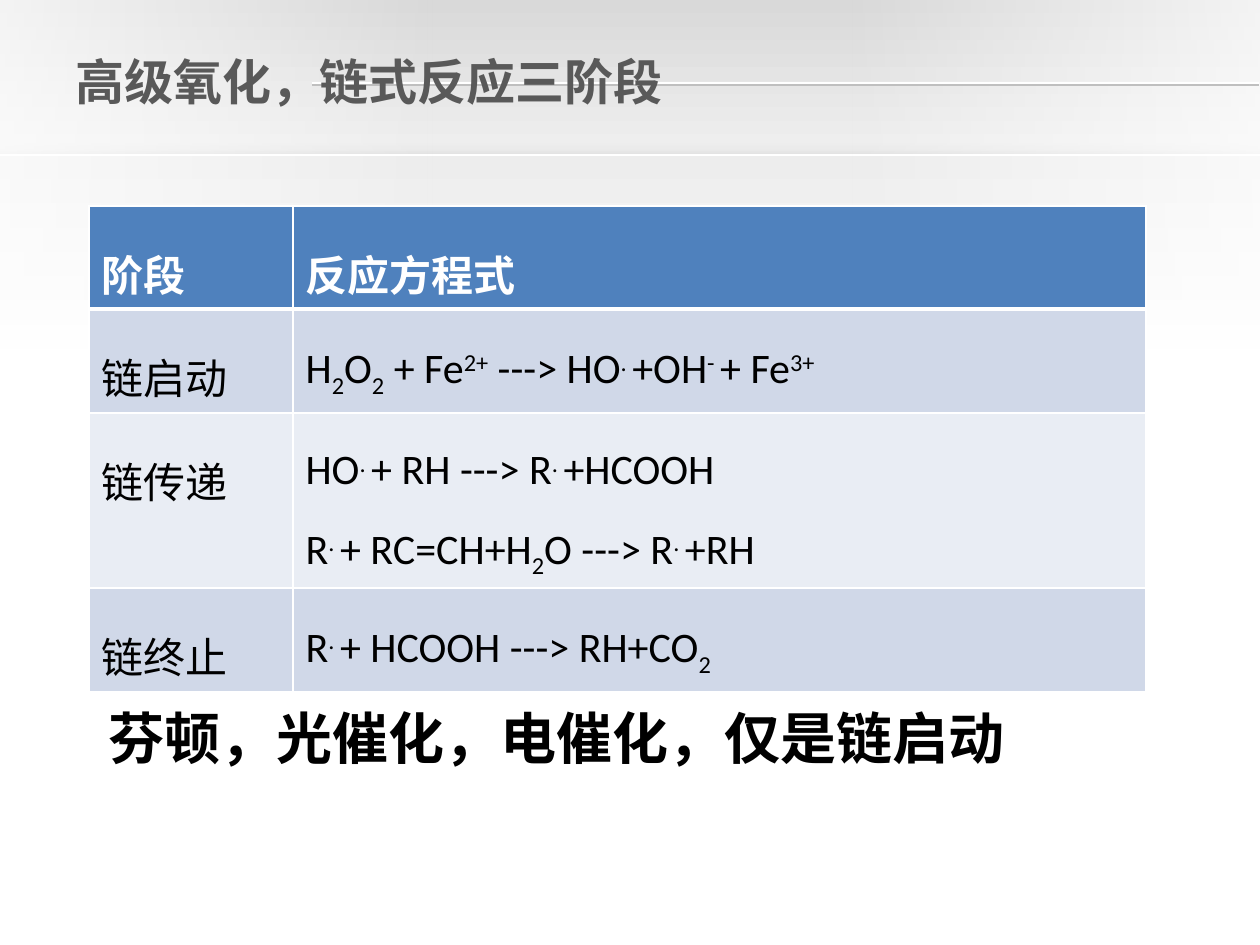
from lxml.etree import SubElement as Sub
from pptx import Presentation
from pptx.dml.color import RGBColor as Rgb
from pptx.enum.shapes import MSO_CONNECTOR as Line, MSO_SHAPE as Shape
from pptx.enum.text import MSO_ANCHOR as Anchor
from pptx.oxml.ns import qn
from pptx.util import Emu, Pt

PX_PER_INCH = 126
LATIN, CJK = "Calibri", "Noto Sans CJK SC"
WHITE, BLACK = Rgb(255, 255, 255), Rgb(0, 0, 0)
TITLE_GREY, RULE_GREY = Rgb(0x59, 0x59, 0x59), Rgb(0xBF, 0xBF, 0xBF)
TOP_GREY, BAND_GREY = Rgb(0xD9, 0xD9, 0xD9), Rgb(0xED, 0xED, 0xED)
SHADE_GREY = Rgb(0x80, 0x80, 0x80)
HEADER_BLUE = Rgb(0x4F, 0x81, 0xBD)
ROW_TINTS = Rgb(0xD0, 0xD8, 0xE8), Rgb(0xE9, 0xED, 0xF4)

# Equations: "|" parts the runs, "_" lowers a run, "^" raises it
STAGES = [
    ("阶段", ["反应方程式"]),
    ("链启动", ["H|_2|O|_2| + Fe|^2+| ---> HO|^. |+OH|^- |+ Fe|^3+"]),
    ("链传递", ["HO|^. |+ RH ---> R|^. |+HCOOH",
             "R|^. |+ RC=CH+H|_2|O ---> R|^. |+RH"]),
    ("链终止", ["R|^. |+ HCOOH ---> RH+CO|_2"]),
]
BASELINES = {"_": -25000, "^": 30000}


def px(length):
    return Emu(round(length * 914400 / PX_PER_INCH))


def paint_gradient(owner, fill, angle, stops):
    """Stops are (percent, colour, opacity percent)."""
    fill.solid()
    solid = owner.find(".//" + qn("a:solidFill"))
    gradient = solid.makeelement(qn("a:gradFill"), {"rotWithShape": "1"})
    stop_list = Sub(gradient, qn("a:gsLst"))
    for percent, colour, opacity in stops:
        stop = Sub(stop_list, qn("a:gs"), pos=str(percent * 1000))
        tone = Sub(stop, qn("a:srgbClr"), val=str(colour))
        if opacity < 100:
            Sub(tone, qn("a:alpha"), val=str(opacity * 1000))
    Sub(gradient, qn("a:lin"), ang=str(angle * 60000), scaled="0")
    solid.getparent().replace(solid, gradient)


def add_band(page, box, angle, stops):
    band = page.shapes.add_shape(Shape.RECTANGLE, *map(px, box))
    band.shadow.inherit = False
    band.line.fill.background()
    paint_gradient(band.element, band.fill, angle, stops)


def add_rule(page, left, right, y, colour, width):
    rule = page.shapes.add_connector(
        Line.STRAIGHT, px(left), px(y), px(right), px(y))
    rule.line.color.rgb = colour
    rule.line.width = Pt(width)
    Sub(rule.element.spPr, qn("a:effectLst"))


def format_span(span, size, colour, bold, latin=LATIN):
    font = span.font
    font.size, font.bold, font.name = Pt(size), bold, latin
    font.color.rgb = colour
    Sub(font._element, qn("a:ea"), typeface=CJK)


def add_text(page, box, text, size, colour, latin, anchor):
    frame = page.shapes.add_textbox(*map(px, box)).text_frame
    frame.word_wrap = True
    frame.vertical_anchor = anchor
    frame.text = text
    format_span(frame.paragraphs[0].runs[0], size, colour, True, latin)


def set_borders(cell, widths):
    properties = cell._tc.get_or_add_tcPr()
    for index, (side, width) in enumerate(widths.items()):
        border = properties.makeelement(
            qn("a:ln" + side), {"w": str(Pt(width))})
        fill = Sub(border, qn("a:solidFill"))
        Sub(fill, qn("a:srgbClr"), val=str(WHITE))
        properties.insert(index, border)


def fill_cell(cell, lines, row):
    header = row == 0
    cell.fill.solid()
    cell.fill.fore_color.rgb = HEADER_BLUE if header else ROW_TINTS[(row - 1) % 2]
    set_borders(cell, {"L": 1, "R": 1, "T": 3 if row == 1 else 1,
                       "B": 3 if header else 1})
    frame = cell.text_frame
    frame.text = "\n".join(line.split("|")[0] for line in lines)
    for para, line in zip(frame.paragraphs, lines):
        para.line_spacing = 1.5
        for part in line.split("|")[1:]:
            span = para.add_run()
            span.text = part.lstrip("_^")
            if part[0] in BASELINES:
                span.font._element.set("baseline", str(BASELINES[part[0]]))
        for span in para.runs:
            format_span(span, 24, WHITE if header else BLACK, header)


def add_backdrop(page, width):
    paint_gradient(page.element, page.background.fill, 90,
                   [(0, TOP_GREY, 100), (27, WHITE, 100)])
    # Shaded step under the title
    edge, bottom = 155, 373
    add_band(page, (0, edge - 14, width, 20), 270,
             [(0, SHADE_GREY, 30), (100, WHITE, 0)])
    add_band(page, (0, edge, width, bottom - edge), 90,
             [(0, BAND_GREY, 100), (100, WHITE, 100)])
    add_rule(page, 0, width, edge, WHITE, 0.75)
    # Light fading in from both sides
    fade = [(0, WHITE, 70), (99, WHITE, 0)]
    add_band(page, (width - 412, 0, 412, bottom), 180, fade)
    add_band(page, (0, 0, 432, bottom), 0, fade)
    # Double rule behind the title
    add_rule(page, 312, width - 1, 83, WHITE, 1)
    add_rule(page, 312, width - 1, 85, RULE_GREY, 1)


def add_stage_table(page, left, top, widths, heights):
    table = page.shapes.add_table(
        len(heights), len(widths), px(left), px(top),
        px(sum(widths)), px(sum(heights))).table
    for column, width in zip(table.columns, widths):
        column.width = px(width)
    for row, (stage, equations) in enumerate(STAGES):
        table.rows[row].height = px(heights[row])
        fill_cell(table.cell(row, 0), [stage], row)
        fill_cell(table.cell(row, 1), equations, row)


def main():
    deck = Presentation()
    deck.slide_width, deck.slide_height = px(1260), px(945)
    page = deck.slides.add_slide(deck.slide_layouts[6])
    add_backdrop(page, 1260)
    add_text(page, (63, 12, 656, 137), "高级氧化，链式反应三阶段",
             28, TITLE_GREY, CJK, Anchor.MIDDLE)
    add_stage_table(page, 89, 206, (204, 853), (103, 104, 175, 104))
    add_text(page, (96, 697, 1070, 80), "芬顿，光催化，电催化，仅是链启动",
             32, BLACK, LATIN, Anchor.TOP)
    deck.save("out.pptx")


if __name__ == "__main__":
    main()
